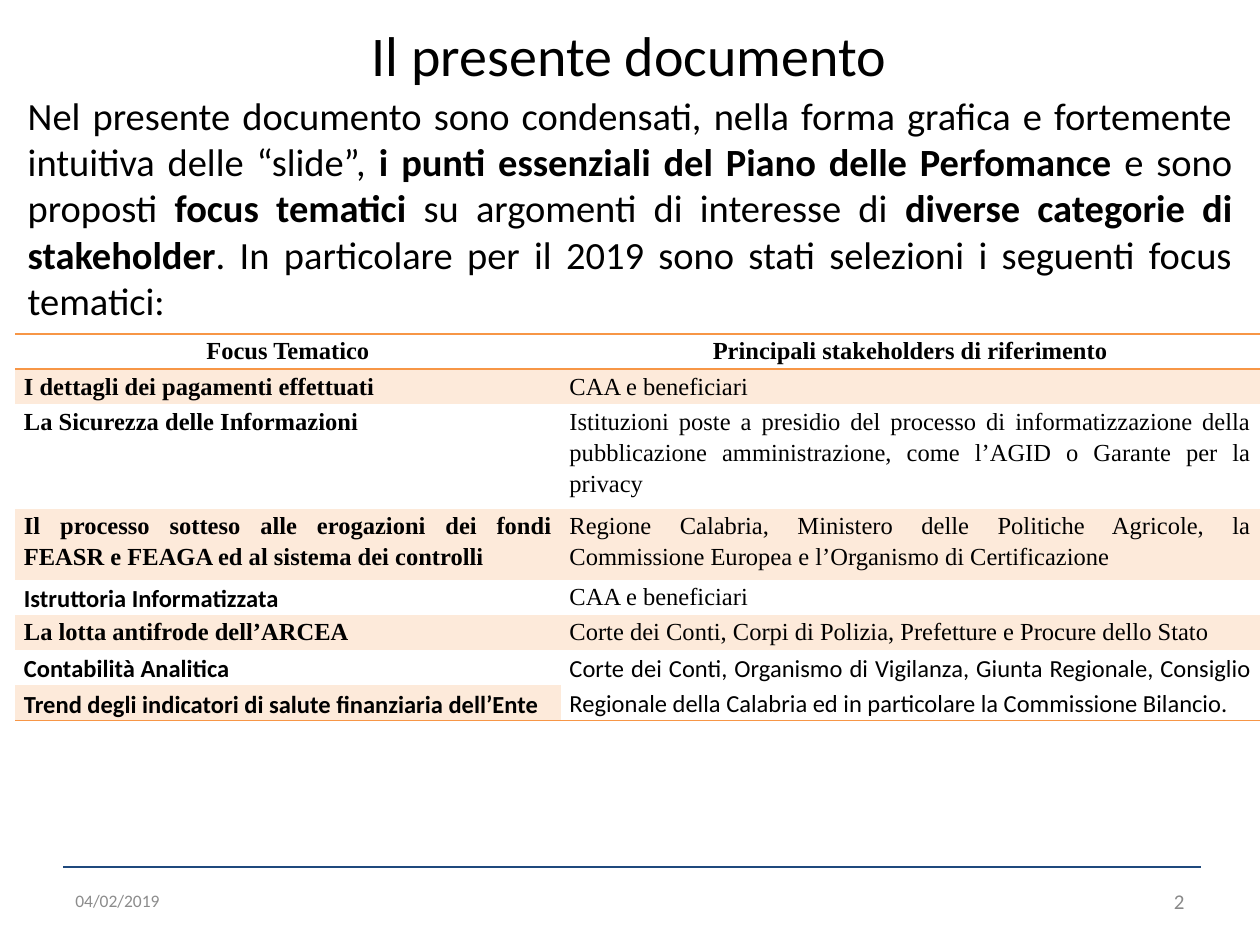
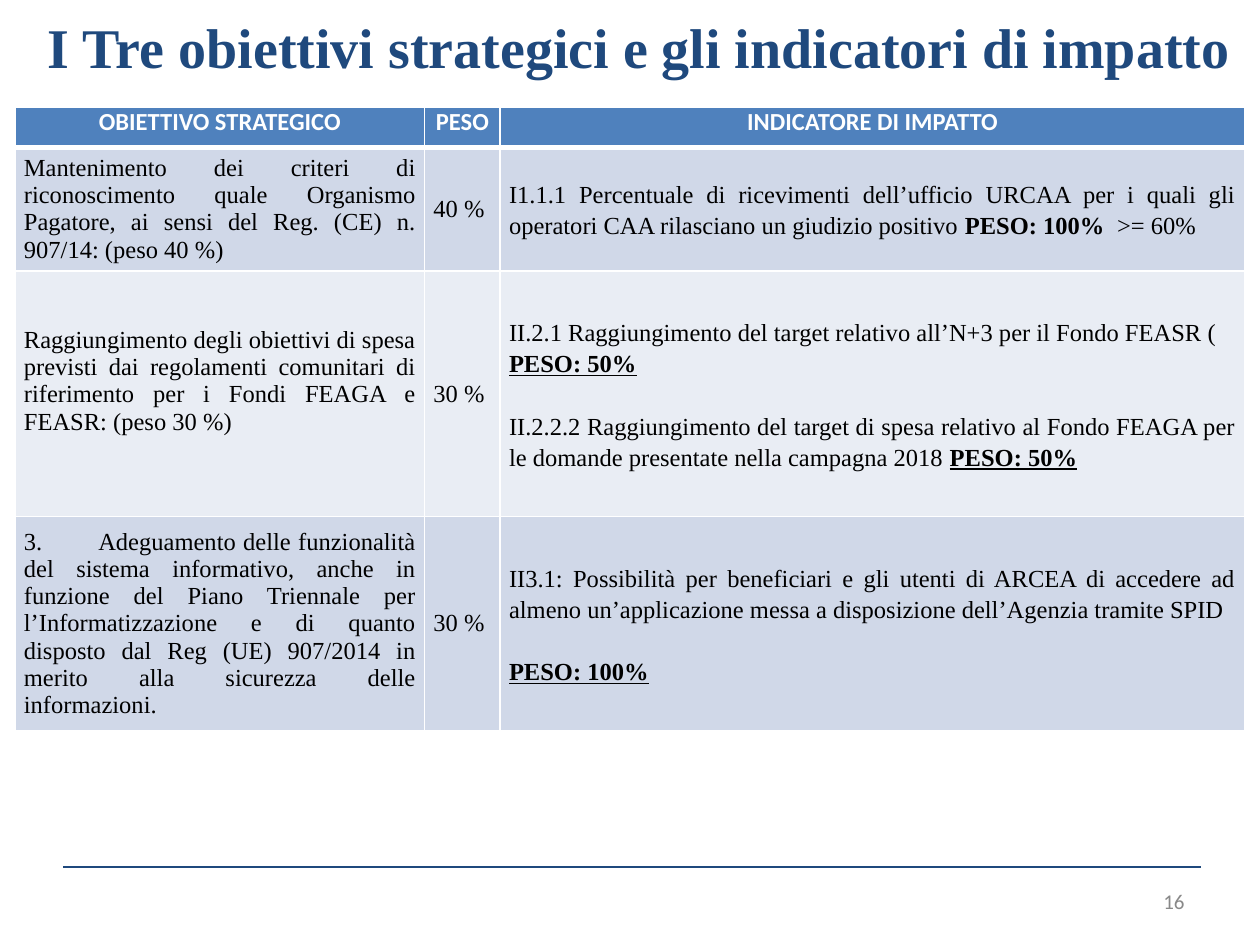
from lxml import etree
from pptx import Presentation
from pptx.dml.color import RGBColor
from pptx.enum import text as t
from pptx.oxml import ns
from pptx.util import Inches, Pt

SERIF, SANS = "Times New Roman", "Calibri"
BLACK, WHITE, NAVY, GREY = "000000", "FFFFFF", "1F497D", "898989"
ORANGE, PEACH = "F79646", "FDEADA"
BLUE, DARK, LIGHT = "4F81BD", "D0D8E8", "E9EDF4"
LEFT, MID, RIGHT, JUST = (t.PP_ALIGN.LEFT, t.PP_ALIGN.CENTER,
                          t.PP_ALIGN.RIGHT, t.PP_ALIGN.JUSTIFY)
TOP, CENTRE = t.MSO_ANCHOR.TOP, t.MSO_ANCHOR.MIDDLE
PLAIN_GRID = "{2D5ABB26-0587-4C30-8999-92F81FD0307C}"

INTRO = [
    ("Nel presente documento sono condensati, nella forma grafica e "
     "fortemente intuitiva delle “slide”, ", ""),
    ("i punti essenziali del Piano delle Perfomance", "b"),
    (" e sono proposti ", ""),
    ("focus tematici ", "b"),
    ("su argomenti di interesse di ", ""),
    ("diverse categorie di stakeholder", "b"),
    (". In particolare per il 2019 sono stati selezioni i seguenti "
     "focus tematici:", ""),
]

# Topic, its font, stakeholders, their font, row height
TOPICS = [
    ("Focus Tematico", SERIF,
     "Principali stakeholders di riferimento", SERIF, 0.28),
    ("I dettagli dei pagamenti effettuati", SERIF,
     "CAA e beneficiari", SERIF, 0.28),
    ("La Sicurezza delle Informazioni", SERIF,
     "Istituzioni poste a presidio del processo di informatizzazione della "
     "pubblicazione amministrazione, come l’AGID o Garante per la privacy",
     SERIF, 0.83),
    ("Il processo sotteso alle erogazioni dei fondi FEASR e FEAGA ed al "
     "sistema dei controlli", SERIF,
     "Regione Calabria, Ministero delle Politiche Agricole, la Commissione "
     "Europea e l’Organismo di Certificazione", SERIF, 0.56),
    ("Istruttoria Informatizzata", SANS, "CAA e beneficiari", SERIF, 0.28),
    ("La lotta antifrode dell’ARCEA", SERIF,
     "Corte dei Conti, Corpi di Polizia, Prefetture e Procure dello Stato",
     SERIF, 0.28),
    ("Contabilità Analitica", SANS,
     "Corte dei Conti, Organismo di Vigilanza, Giunta Regionale, Consiglio "
     "Regionale della Calabria ed in particolare la Commissione Bilancio. ",
     SANS, 0.28),
    ("Trend degli indicatori di salute finanziaria dell’Ente", SANS,
     "", SANS, 0.28),
]

HEADS = ["OBIETTIVO STRATEGICO", "PESO", "INDICATORE DI IMPATTO"]

# Goal, weight, indicators as (runs, space before), row height
GOALS = [
    ("Mantenimento dei criteri di riconoscimento quale Organismo Pagatore, "
     "ai sensi del Reg. (CE) n. 907/14: (peso 40 %)", "40 %",
     [([("I1.1.1 Percentuale di ricevimenti dell’ufficio URCAA per i quali "
         "gli operatori CAA rilasciano un giudizio positivo ", ""),
        ("PESO: 100%  ", "b"), (">= 60% ", "")], 0)], 0.98),
    ("Raggiungimento degli obiettivi di spesa previsti dai regolamenti "
     "comunitari di riferimento per i Fondi FEAGA e FEASR: (peso 30 %)",
     "30 %",
     [([("II.2.1 Raggiungimento del target relativo all’N+3 per il Fondo "
         "FEASR (", "")], 0),
      ([("PESO: 50%", "bu")], 0),
      ([("II.2.2.2 Raggiungimento del target di spesa relativo al Fondo "
         "FEAGA per le domande presentate nella campagna 2018 ", ""),
        ("PESO: 50%", "bu")], 18)], 1.95),
    ("3.\tAdeguamento delle funzionalità del sistema informativo, anche in "
     "funzione del Piano Triennale per l’Informatizzazione e di quanto "
     "disposto dal Reg (UE) 907/2014 in merito alla sicurezza delle "
     "informazioni.", "30 %",
     [([("II3.1: Possibilità per beneficiari e gli utenti di ARCEA di "
         "accedere ad almeno un’applicazione messa a disposizione "
         "dell’Agenzia tramite SPID ", "")], 0),
      ([("PESO: 100%", "bu")], 18)], 1.7),
]


def rgb(code):
    return RGBColor.from_string(code)


def write(para, runs, size, font, color=BLACK, align=LEFT, lead=1, before=0):
    """Fill a paragraph with (text, style) runs; style holds b and/or u."""
    para.alignment, para.line_spacing = align, lead
    para.space_before = Pt(before)
    for words, style in runs:
        run = para.add_run()
        run.text = words
        face = run.font
        face.name, face.size, face.color.rgb = font, Pt(size), rgb(color)
        face.bold, face.underline = "b" in style, "u" in style


def place(shape, box):
    shape.left, shape.top, shape.width, shape.height = map(Inches, box)


def head(slide, box, words, font, color, align, style="", wrap=True):
    shape = slide.shapes.title
    place(shape, box)
    frame = shape.text_frame
    frame.auto_size = t.MSO_AUTO_SIZE.NONE
    frame.word_wrap, frame.vertical_anchor = wrap, TOP
    write(frame.paragraphs[0], [(words, style)], 32, font, color, align)


def intro(slide, box):
    shape = slide.placeholders[1]
    place(shape, box)
    frame = shape.text_frame
    frame.auto_size = t.MSO_AUTO_SIZE.NONE
    para = frame.paragraphs[0]
    props = para._p.get_or_add_pPr()
    props.set("marL", "0")
    props.set("indent", "0")
    etree.SubElement(props, ns.qn("a:buNone"))
    write(para, INTRO, 22, SANS, align=JUST)


def label(slide, box, words, size, color, align):
    frame = slide.shapes.add_textbox(*map(Inches, box)).text_frame
    frame.word_wrap, frame.vertical_anchor = True, CENTRE
    write(frame.paragraphs[0], [(words, "")], size, SANS, color, align)


def footer(slide, number, date=None):
    rule = slide.shapes.add_connector(
        1, Inches(0.5), Inches(6.88), Inches(9.53), Inches(6.88))
    rule.line.color.rgb, rule.line.width = rgb(NAVY), Pt(1.5)
    etree.SubElement(rule._element.spPr, ns.qn("a:effectLst"))
    if date:
        label(slide, (0.5, 6.95, 2.33, 0.4), date, 10, "8C8C8C", LEFT)
    label(slide, (7.17, 6.95, 2.33, 0.4), number, 12, GREY, RIGHT)


def grid(slide, left, top, cols, rows):
    """Add an unstyled table with the given column and row sizes."""
    frame = slide.shapes.add_table(
        len(rows), len(cols), Inches(left), Inches(top),
        Inches(sum(cols)), Inches(sum(rows)))
    table = frame.table
    table._tbl.tblPr.find(ns.qn("a:tableStyleId")).text = PLAIN_GRID
    table.first_row = table.horz_banding = False
    for col, width in zip(table.columns, cols):
        col.width = Inches(width)
    for row, height in zip(table.rows, rows):
        row.height = Inches(height)
    return table


def dress(cell, fill, anchor=TOP, **edges):
    """Set insets, fill and edges; an edge is L, R, T or B=(colour, points)."""
    cell.margin_left = cell.margin_right = Inches(0.07)
    cell.margin_top = cell.margin_bottom = 0
    cell.vertical_anchor = anchor
    props = cell._tc.get_or_add_tcPr()
    for side in "LRTB":
        if side in edges:
            color, width = edges[side]
            line = etree.SubElement(props, ns.qn("a:ln" + side),
                                    w=str(Pt(width)))
            solid = etree.SubElement(line, ns.qn("a:solidFill"))
            etree.SubElement(solid, ns.qn("a:srgbClr"), val=color)
    if fill:
        cell.fill.solid()
        cell.fill.fore_color.rgb = rgb(fill)
    else:
        cell.fill.background()


def topics(slide, left, top):
    table = grid(slide, left, top, [4.33, 5.55], [row[4] for row in TOPICS])
    last = len(TOPICS) - 1
    table.cell(last - 1, 1).merge(table.cell(last, 1))
    for i, (topic, face, party, font, _) in enumerate(TOPICS):
        edges = {"T": (ORANGE, 1)} if i == 0 else {}
        if i in (0, last):
            edges["B"] = (ORANGE, 1)
        for j, (words, name) in enumerate([(topic, face), (party, font)]):
            cell = table.cell(i, j)
            merged = j == 1 and i >= last - 1
            ends = {"B": (ORANGE, 1)} if merged else edges
            dress(cell, PEACH if i % 2 and not merged else None, **ends)
            if words:
                style = "b" if i == 0 or j == 0 else ""
                write(cell.text_frame.paragraphs[0], [(words, style)], 14,
                      name, align=JUST if i else MID, lead=1.15)


def goals(slide, left, top):
    table = grid(slide, left, top, [3.25, 0.6, 5.91],
                 [0.32] + [row[3] for row in GOALS])
    edges = dict.fromkeys("LRTB", (WHITE, 1))
    thick = (WHITE, 3)
    for j, words in enumerate(HEADS):
        cell = table.cell(0, j)
        dress(cell, BLUE, **{**edges, "B": thick})
        write(cell.text_frame.paragraphs[0], [(words, "b")], 14, SANS,
              WHITE, MID)
    for i, (goal, weight, marks, _) in enumerate(GOALS, 1):
        sides = {**edges, "T": thick} if i == 1 else edges
        cells = [table.cell(i, j) for j in range(3)]
        for cell in cells:
            dress(cell, DARK if i % 2 else LIGHT, CENTRE, **sides)
        for cell, words in zip(cells, (goal, weight)):
            para = cell.text_frame.paragraphs[0]
            tabs = etree.SubElement(para._p.get_or_add_pPr(),
                                    ns.qn("a:tabLst"))
            etree.SubElement(tabs, ns.qn("a:tab"), pos=str(Inches(0.59)),
                             algn="l")
            write(para, [(words, "")], 14, SERIF, align=JUST)
        frame = cells[2].text_frame
        for k, (runs, gap) in enumerate(marks):
            para = frame.add_paragraph() if k else frame.paragraphs[0]
            write(para, runs, 14, SERIF, align=JUST, lead=1.15, before=gap)
    table.cell(2, 0).margin_bottom = Inches(0.2)


def main():
    deck = Presentation()
    deck.slide_width, deck.slide_height = Inches(10), Inches(7.5)

    about = deck.slides.add_slide(deck.slide_layouts[1])
    footer(about, "2", "04/02/2019")
    head(about, (0.1, 0.11, 9.79, 0.81), "Il presente documento",
         SANS, BLACK, MID)
    intro(about, (0.12, 0.68, 9.76, 1.65))
    topics(about, 0.12, 2.65)

    aims = deck.slides.add_slide(deck.slide_layouts[5])
    footer(aims, "16")
    head(aims, (0.28, 0.05, 9.68, 0.64),
         "I Tre obiettivi strategici e gli indicatori di impatto",
         SERIF, NAVY, LEFT, "b", wrap=False)
    goals(aims, 0.12, 0.85)

    deck.save("out.pptx")


if __name__ == "__main__":
    main()
